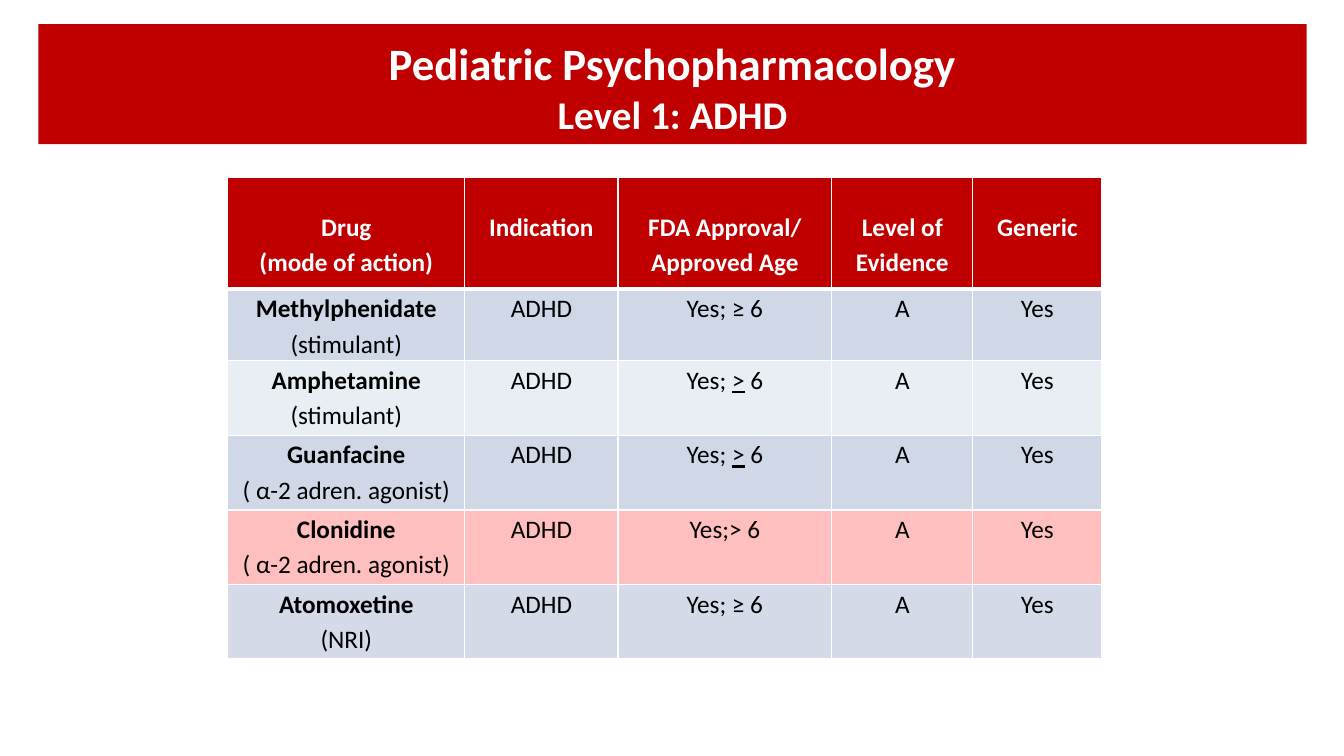
from lxml import etree
from pptx import Presentation
from pptx.dml.color import RGBColor
from pptx.enum.shapes import MSO_SHAPE
from pptx.enum.text import PP_ALIGN
from pptx.oxml.ns import qn
from pptx.util import Inches, Pt

RECTANGLE = MSO_SHAPE.RECTANGLE
CENTER = PP_ALIGN.CENTER
RED, WHITE, BLACK = "C00000", "FFFFFF", "000000"
COLUMN_WIDTHS = [2.35, 1.52, 2.12, 1.4, 1.28]
ROW_HEIGHTS = [1.11, 0.71, 0.74, 0.74, 0.74, 0.74]
HEADINGS = ["Drug\n(mode of action)", "Indication", "FDA Approval/\nApproved Age",
            "Level of Evidence", "Generic"]
DRUGS = [
    ("Methylphenidate\n(stimulant)", "Yes; ≥ 6", "D0D8E8"),
    ("Amphetamine\n(stimulant)", "Yes; _>_ 6", "E9EDF4"),
    ("Guanfacine\n( α-2 adren. agonist)", "Yes; _>_ 6", "D0D8E8"),
    ("Clonidine\n( α-2 adren. agonist)", "Yes;> 6", "FFBFBF"),
    ("Atomoxetine\n(NRI)", "Yes; ≥ 6", "D4DAE8"),
]


def color(value):
    """Turn a hex string into a colour."""
    return RGBColor.from_string(value)


def fill_solid(item, value):
    """Give a shape or cell a solid fill."""
    item.fill.solid()
    item.fill.fore_color.rgb = color(value)


def write_line(para, text, size, ink, bold):
    """Write one centred line, underlining what stands between underscores."""
    para.alignment = CENTER
    for index, part in enumerate(text.split("_")):
        span = para.add_run()
        span.text = part
        font = {"name": "Calibri", "size": Pt(size), "bold": bold, "underline": index % 2 == 1}
        for name, value in font.items():
            setattr(span.font, name, value)
        span.font.color.rgb = color(ink)


def next_para(frame, index):
    """Return the first paragraph of a frame, or add a further one."""
    return frame.add_paragraph() if index else frame.paragraphs[0]


def set_borders(cell, widths):
    """Draw white cell borders of the given widths in points."""
    properties = cell._tc.get_or_add_tcPr()
    for index, (side, width) in enumerate(widths.items()):
        line = etree.Element(qn(f"a:{side}"), w=str(Pt(width)))
        solid = etree.SubElement(line, qn("a:solidFill"))
        etree.SubElement(solid, qn("a:srgbClr"), val=WHITE)
        properties.insert(index, line)


def add_banner(page, left, top, width, height):
    """Place the red banner with its two title lines."""
    banner = page.shapes.add_shape(RECTANGLE, Inches(left), Inches(top), Inches(width), Inches(height))
    banner.shadow.inherit = False
    fill_solid(banner, RED)
    banner.line.fill.background()
    box = page.shapes.add_textbox(Inches(left + 1.29), Inches(top + 0.07),
                                  Inches(width - 2.58), Inches(height - 0.08))
    box.text_frame.word_wrap = True
    lines = [("Pediatric Psychopharmacology", 32), ("Level 1: ADHD", 28)]
    for index, (text, size) in enumerate(lines):
        write_line(next_para(box.text_frame, index), text, size, WHITE, True)


def fill_cell(cell, text, fill, row, column):
    """Style one table cell and write its lines."""
    header = row == 0
    margins = {"margin_left": 0, "margin_right": 0, "margin_bottom": 0,
               "margin_top": Inches(0.3) if header else 0}
    for name, value in margins.items():
        setattr(cell, name, value)
    fill_solid(cell, fill)
    set_borders(cell, {"lnL": 1, "lnR": 1, "lnT": 3 if row == 1 else 1, "lnB": 3 if header else 1})
    for index, line in enumerate(text.split("\n")):
        para = next_para(cell.text_frame, index)
        para.line_spacing = 1.15
        bold = header or (column == 0 and index == 0)
        write_line(para, line, 18, WHITE if header else BLACK, bold)


def add_drug_table(page, left, top):
    """Place the table of drugs with its top left corner at the given point."""
    frame = page.shapes.add_table(
        len(ROW_HEIGHTS), len(COLUMN_WIDTHS), Inches(left), Inches(top),
        Inches(sum(COLUMN_WIDTHS)), Inches(sum(ROW_HEIGHTS)))
    table = frame.table
    for column, width in zip(table.columns, COLUMN_WIDTHS):
        column.width = Inches(width)
    for row, height in zip(table.rows, ROW_HEIGHTS):
        row.height = Inches(height)
    rows = [(HEADINGS, RED)]
    rows += [([drug, "ADHD", age, "A", "Yes"], fill) for drug, age, fill in DRUGS]
    for row, (texts, fill) in enumerate(rows):
        for column, text in enumerate(texts):
            fill_cell(table.cell(row, column), text, fill, row, column)


def main():
    """Build the slide and save the deck."""
    deck = Presentation()
    deck.slide_width, deck.slide_height = Inches(13.33), Inches(7.5)
    page = deck.slides.add_slide(deck.slide_layouts[6])
    add_banner(page, 0.38, 0.24, 12.58, 1.19)
    add_drug_table(page, 2.26, 1.76)
    deck.save("out.pptx")


if __name__ == "__main__":
    main()
